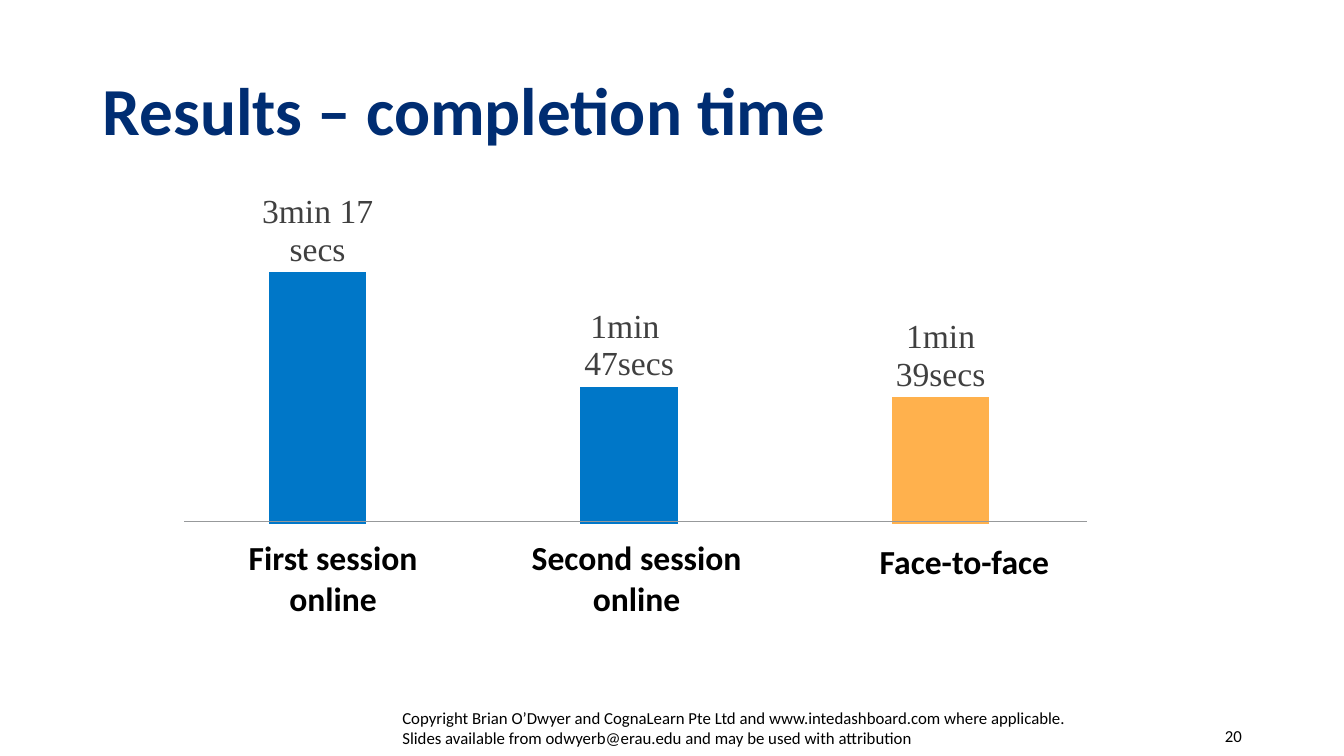
from lxml import etree
from pptx import Presentation
from pptx import util as u
from pptx.chart import data as chart_data
from pptx.dml.color import RGBColor
from pptx.enum import chart as charts, shapes, text
from pptx.oxml import ns

NAVY = RGBColor(0x00, 0x2D, 0x72)
BLUE = RGBColor(0x00, 0x77, 0xC8)
ORANGE = RGBColor(0xFF, 0xB1, 0x4D)
GRAY = RGBColor(0x97, 0x99, 0x9B)
DARK_GRAY = RGBColor(0x40, 0x40, 0x40)
BLACK = RGBColor(0, 0, 0)

SESSIONS = ["First session online", "Second session online", "Face-to-face"]
SECONDS = [197, 107, 99]
TIMES = ["3min 17 secs", "1min  47secs", "1min 39secs"]
BAR_COLORS = [BLUE, BLUE, ORANGE]
SESSION_PLACES = [(5.31, 13.41), (12.96, 13.41), (21.22, 13.51)]


def set_font(font, *, size, color=BLACK, bold=False, name="Calibri"):
    font.name, font.size, font.bold = name, u.Pt(size), bold
    font.color.rgb = color


def write_text(paragraph, content, *, align=text.PP_ALIGN.LEFT, spacing=1.0,
               **font_style):
    paragraph.alignment = align
    paragraph.line_spacing = spacing
    run = paragraph.add_run()
    run.text = content
    set_font(run.font, **font_style)


class SlideBuilder:
    label_style = {"name": "Times New Roman", "size": 24, "color": DARK_GRAY}

    def __init__(self, slide):
        self.slide = slide

    def add_text(self, left, top, width, height, lines,
                 anchor=text.MSO_ANCHOR.TOP, **style):
        box = self.slide.shapes.add_textbox(
            u.Cm(left), u.Cm(top), u.Cm(width), u.Cm(height))
        frame = box.text_frame
        frame.word_wrap = True
        frame.vertical_anchor = anchor
        for index, line in enumerate(lines):
            paragraph = frame.add_paragraph() if index else frame.paragraphs[0]
            write_text(paragraph, line, **style)

    def add_line(self, left, right, y, color, weight):
        line = self.slide.shapes.add_connector(
            shapes.MSO_CONNECTOR.STRAIGHT,
            u.Cm(left), u.Cm(y), u.Cm(right), u.Cm(y))
        line.line.color.rgb = color
        line.line.width = u.Pt(weight)
        etree.SubElement(line._element.spPr, ns.qn("a:effectLst"))

    def add_columns(self, left, top, width, height, values, labels, colors):
        data = chart_data.CategoryChartData()
        data.categories = [str(n) for n in range(1, len(values) + 1)]
        data.add_series("Series 1", values)
        chart = self.slide.shapes.add_chart(
            charts.XL_CHART_TYPE.COLUMN_CLUSTERED, u.Cm(left), u.Cm(top),
            u.Cm(width), u.Cm(height), data).chart
        chart.has_title = chart.has_legend = False
        set_font(chart.font, size=10)

        chart.category_axis.visible = False
        axis = chart.value_axis
        axis.visible = axis.has_major_gridlines = False
        axis.minimum_scale, axis.maximum_scale = 0, 250

        plot = chart.plots[0]
        plot.gap_width, plot.overlap = 219, -27
        plot.vary_by_categories = False
        series = plot.series[0]
        series.format.fill.solid()
        series.format.fill.fore_color.rgb = BLUE
        series_labels = series.data_labels
        series_labels.show_value = True
        series_labels.position = charts.XL_LABEL_POSITION.OUTSIDE_END
        set_font(series_labels.font, bold=True, **self.label_style)
        for index, (label, color) in enumerate(zip(labels, colors)):
            point = series.points[index]
            point.format.fill.solid()
            point.format.fill.fore_color.rgb = color
            frame = point.data_label.text_frame
            frame.word_wrap = True
            write_text(frame.paragraphs[0], label,
                       align=text.PP_ALIGN.CENTER, **self.label_style)
            point.data_label.position = charts.XL_LABEL_POSITION.OUTSIDE_END
        self.place_plot(chart, x=0.016, y=0.215, w=0.968, h=0.785)

    def place_plot(self, chart, **fractions):
        area = chart._chartSpace.chart.plotArea
        for old in area.findall(ns.qn("c:layout")):
            area.remove(old)
        layout = etree.Element(ns.qn("c:layout"))
        area.insert(0, layout)
        manual = etree.SubElement(layout, ns.qn("c:manualLayout"))
        settings = {"layoutTarget": "inner", "xMode": "edge",
                    "yMode": "edge", **fractions}
        for tag, value in settings.items():
            etree.SubElement(manual, ns.qn(f"c:{tag}")).set("val", str(value))


def main():
    presentation = Presentation()
    presentation.slide_width = u.Cm(33.87)
    presentation.slide_height = u.Cm(19.05)
    slide = presentation.slides.add_slide(presentation.slide_layouts[6])
    builder = SlideBuilder(slide)

    # Title
    builder.add_text(2.34, 1.02, 29.21, 3.68, ["Results – completion time"],
                     anchor=text.MSO_ANCHOR.MIDDLE, size=48, color=NAVY,
                     bold=True, spacing=0.9)

    # Footer
    builder.add_text(30.38, 18.16, 1.17, 0.8, ["20"], size=12,
                     align=text.PP_ALIGN.RIGHT)
    builder.add_text(9.89, 17.7, 20.12, 1.02, [
        "Copyright Brian O’Dwyer and CognaLearn Pte Ltd and "
        "www.intedashboard.com where applicable.",
        "Slides available from odwyerb@erau.edu and may be used with attribution",
    ], size=12)

    # Completion times with session names and baseline
    builder.add_columns(3.69, 2.96, 24.33, 10.24, SECONDS, TIMES, BAR_COLORS)
    for session, (left, top) in zip(SESSIONS, SESSION_PLACES):
        builder.add_text(left, top, 6.17, 2.31, [session], size=24, bold=True,
                         align=text.PP_ALIGN.CENTER)
    builder.add_line(4.64, 27.39, 13.13, GRAY, 0.5)

    presentation.save("out.pptx")


if __name__ == "__main__":
    main()
